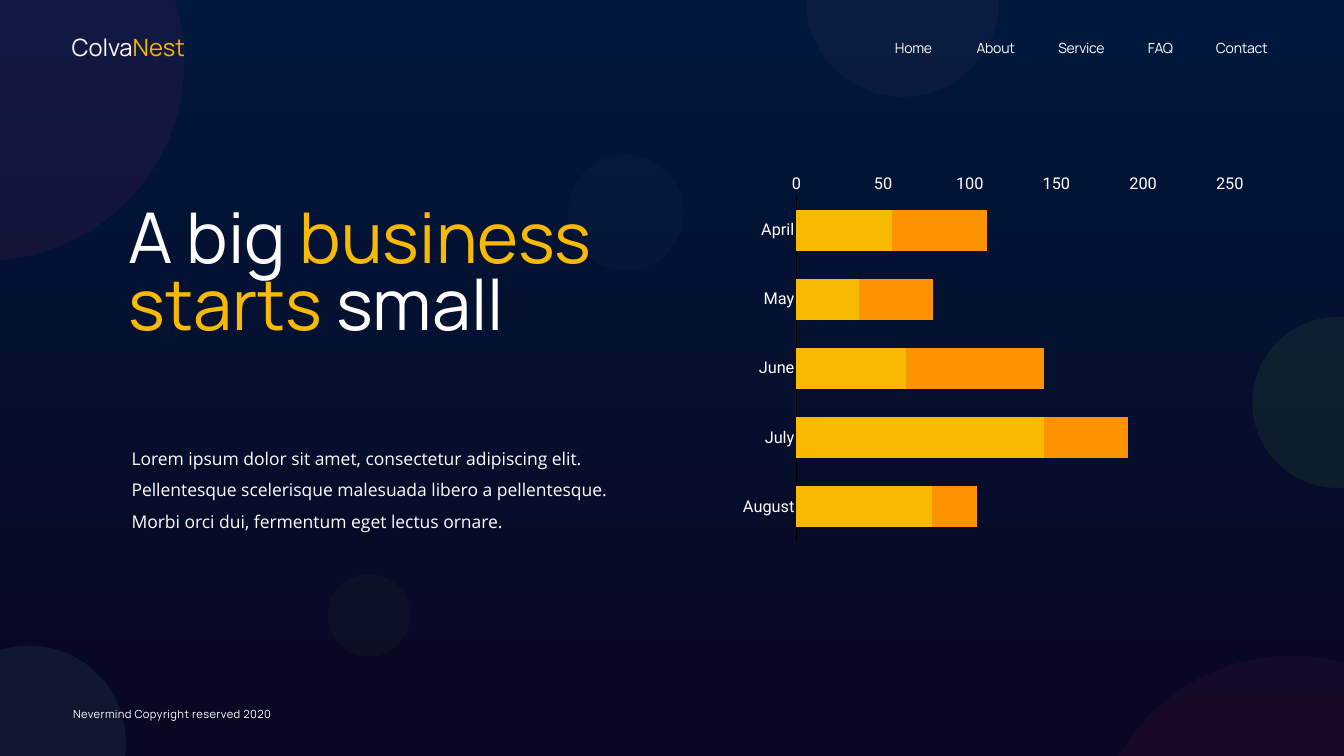
from lxml import etree
from pptx import Presentation
from pptx.chart.data import CategoryChartData
from pptx.dml.color import RGBColor
from pptx.enum.chart import XL_AXIS_CROSSES, XL_CHART_TYPE, XL_TICK_MARK
from pptx.enum.shapes import MSO_SHAPE
from pptx.enum.text import MSO_ANCHOR, MSO_AUTO_SIZE, PP_ALIGN
from pptx.oxml.ns import qn
from pptx.util import Pt

EMU_PER_PX = 9144
OVAL = MSO_SHAPE.OVAL
STACKED_BAR = XL_CHART_TYPE.BAR_STACKED
NO_TICK = XL_TICK_MARK.NONE
AT_MAXIMUM = XL_AXIS_CROSSES.MAXIMUM
TOP, MIDDLE = MSO_ANCHOR.TOP, MSO_ANCHOR.MIDDLE
GROW, FIXED = MSO_AUTO_SIZE.SHAPE_TO_FIT_TEXT, MSO_AUTO_SIZE.NONE
LEFT = PP_ALIGN.LEFT

WHITE = RGBColor(0xFF, 0xFF, 0xFF)
BLACK = RGBColor(0x00, 0x00, 0x00)
YELLOW = RGBColor(0xF7, 0xBA, 0x01)
ORANGE = RGBColor(0xFE, 0x93, 0x01)
NIGHT = RGBColor(0x09, 0x07, 0x21)
NAVY = RGBColor(0x00, 0x18, 0x3C)
PINK = RGBColor(0xCB, 0x2A, 0x7A)
GREEN = RGBColor(0x89, 0xFA, 0x4E)
AQUA = RGBColor(0x72, 0xFD, 0xEA)
CORAL = RGBColor(0xFF, 0x96, 0x8D)

HEADING_FONT, BODY_FONT, CHART_FONT = "Manrope", "Open Sans", "Roboto"

BOTTOM_RIGHT = (2167, 1301, 791, PINK)
RIGHT_EDGE = (2485, 629, 339, GREEN)
BOTTOM_LEFT = (-134, 1281, 384, AQUA)
TOP_LEFT = (-425, -274, 791, PINK)
BACK_CIRCLES = [
    (*BOTTOM_RIGHT, 3),
    (*RIGHT_EDGE, 3),
    (1127, 307, 230, AQUA, 2),
    (*BOTTOM_LEFT, 3),
    (650, 1139, 164, GREEN, 3),
    (*TOP_LEFT, 5),
]
FRONT_CIRCLES = [BOTTOM_RIGHT, RIGHT_EDGE, BOTTOM_LEFT, TOP_LEFT, (1599, -192, 384, CORAL)]
MENU = [("Home", 1770, 93), ("About", 1932, 93), ("Service", 2094, 109), ("FAQ", 2272, 65), ("Contact", 2407, 121)]
MONTHS = ["April", "May", "June", "July", "August"]
SERIES = [
    ("Series 1", [55, 36, 63, 143, 78], YELLOW),
    ("Series 2", [55, 43, 80, 48, 26], ORANGE),
]
PLOT_LAYOUT = [
    ("layoutTarget", "inner"), ("xMode", "edge"), ("yMode", "edge"),
    ("x", "0.128"), ("y", "0.048"), ("w", "0.845"), ("h", "0.871"),
]


def px(*lengths):
    return [length * EMU_PER_PX for length in lengths]


class SlideBuilder:
    def __init__(self, page):
        self.page = page

    def background(self, start, end):
        fill = self.page.background.fill
        fill.gradient()
        fill.gradient_angle = 90
        for stop, color in zip(fill.gradient_stops, (start, end)):
            stop.color.rgb = color

    def circle(self, left, top, size, color, opacity):
        shape = self.page.shapes.add_shape(OVAL, *px(left, top, size, size))
        shape.shadow.inherit = False
        shape.line.fill.background()
        shape.fill.solid()
        shape.fill.fore_color.rgb = color
        tint = shape.fill._xPr.find(qn("a:solidFill"))[0]
        etree.SubElement(tint, qn("a:alpha")).set("val", str(opacity * 1000))

    def set_text(self, box, runs, size, font, inset, anchor=TOP, line_spacing=None, spacing=0):
        frame = box.text_frame
        frame.vertical_anchor = anchor
        frame.margin_left, frame.margin_top, frame.margin_right, frame.margin_bottom = px(*[inset] * 4)
        para = frame.paragraphs[0]
        para.alignment = LEFT
        if line_spacing:
            para.line_spacing = line_spacing
        para.font.size = Pt(size)
        para.font.name = font
        if spacing:
            para.font._rPr.set("spc", str(spacing))
        for text, color in runs:
            span = para.add_run()
            span.text = text
            span.font.color.rgb = color

    def label(self, place, runs, size, **style):
        box = self.page.shapes.add_textbox(*px(*place))
        box.text_frame.word_wrap = False
        box.text_frame.auto_size = GROW
        self.set_text(box, runs, size, HEADING_FONT, 6, **style)

    def placeholder(self, index, place, runs, size, font, line_spacing):
        box = self.page.placeholders[index]
        box.left, box.top, box.width, box.height = px(*place)
        box.element.getparent().append(box.element)
        frame = box.text_frame
        frame.word_wrap = True
        frame.auto_size = FIXED
        properties = frame.paragraphs[0]._p.get_or_add_pPr()
        properties.set("marL", "0")
        properties.set("indent", "0")
        etree.SubElement(properties, qn("a:buNone"))
        frame.paragraphs[0].space_before = Pt(0)
        self.set_text(box, runs, size, font, 5, line_spacing=line_spacing)

    def chart(self, place, categories, series):
        data = CategoryChartData()
        data.categories = categories
        for name, values, _ in series:
            data.add_series(name, values)
        chart = self.page.shapes.add_chart(STACKED_BAR, *px(*place), data).chart
        chart.has_legend = False
        chart.has_title = False
        chart.font.name = CHART_FONT
        plot = chart.plots[0]
        plot.gap_width, plot.overlap = 70, 100
        plot.vary_by_categories = False
        for bars, (_, _, color) in zip(plot.series, series):
            bars.format.fill.solid()
            bars.format.fill.fore_color.rgb = color
        months, amounts = chart.category_axis, chart.value_axis
        for axis in (months, amounts):
            axis.has_major_gridlines = False
            axis.major_tick_mark = axis.minor_tick_mark = NO_TICK
            font = axis.tick_labels.font
            font.name = CHART_FONT
            font.size = Pt(23.3)
            font.color.rgb = WHITE
        months.reverse_order = True
        months.crosses = AT_MAXIMUM
        months.format.line.color.rgb = BLACK
        months.format.line.width = Pt(1)
        amounts.format.line.fill.background()
        amounts.minimum_scale, amounts.maximum_scale, amounts.major_unit = 0, 250, 50
        area = chart._chartSpace.chart.plotArea
        for old in area.findall(qn("c:layout")):
            area.remove(old)
        layout = etree.Element(qn("c:layout"))
        area.insert(0, layout)
        manual = etree.SubElement(layout, qn("c:manualLayout"))
        for tag, value in PLOT_LAYOUT:
            etree.SubElement(manual, qn("c:" + tag)).set("val", value)


def main():
    deck = Presentation()
    deck.slide_width, deck.slide_height = px(2667, 1500)
    page = deck.slides.add_slide(deck.slide_layouts[1])
    builder = SlideBuilder(page)
    builder.background(NIGHT, NAVY)
    for circle in BACK_CIRCLES:
        builder.circle(*circle)
    builder.label((139, 1397, 438, 44), [("Nevermind Copyright reserved 2020", WHITE)], 16, spacing=60)
    title = [("A big ", WHITE), ("business starts", YELLOW), (" small", WHITE)]
    builder.placeholder(0, (250, 411, 1058, 523), title, 100, HEADING_FONT, 0.8)
    body = (
        "Lorem ipsum dolor sit amet, consectetur adipiscing elit. "
        "Pellentesque scelerisque malesuada libero a pellentesque. "
        "Morbi orci dui, fermentum eget lectus ornare."
    )
    builder.placeholder(1, (256, 863, 1058, 226), [(body, WHITE)], 25, BODY_FONT, 1.5)
    for text, left, width in MENU:
        builder.label((left, 72, width, 50), [(text, WHITE)], 20, spacing=-40)
    brand = [("Colva", WHITE), ("Nest", YELLOW)]
    builder.label((136, 61, 259, 77), brand, 34, anchor=MIDDLE, line_spacing=0.7)
    builder.chart((1450, 346, 1018, 792), MONTHS, SERIES)
    for circle in FRONT_CIRCLES:
        builder.circle(*circle, 4)
    deck.save("out.pptx")


if __name__ == "__main__":
    main()
